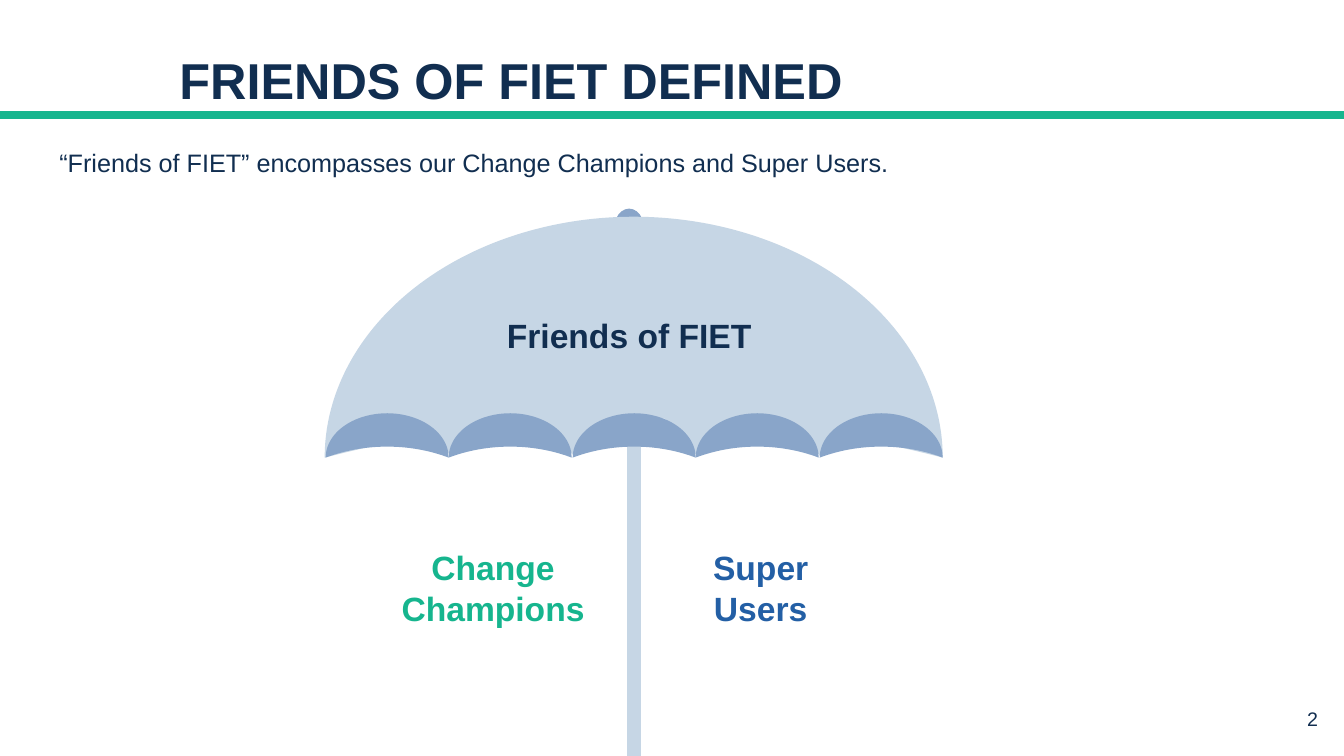
import pptx
import pptx.dml.color
import pptx.enum.shapes
import pptx.enum.text
import pptx.oxml.ns
import pptx.util
import lxml.etree

PX = 9144
SHAPE = pptx.enum.shapes.MSO_SHAPE
ALIGN = pptx.enum.text.PP_ALIGN
NAVY, GREEN, BLUE = "112E50", "16B58E", "235FA5"
PALE, STEEL = "C6D6E5", "89A5C9"


def color(value):
    return pptx.dml.color.RGBColor.from_string(value)


def emu(*lengths):
    return [pptx.util.Emu(length * PX) for length in lengths]


def write(frame, text, size=18, tint=NAVY, bold=False, align=ALIGN.LEFT, spacing=None):
    frame.word_wrap = True
    for index, line in enumerate(text.split("\n")):
        paragraph = frame.add_paragraph() if index else frame.paragraphs[0]
        paragraph.alignment = align
        paragraph.line_spacing = spacing
        run = paragraph.add_run()
        run.text = line
        run.font.name = "Arial"
        run.font.size = pptx.util.Pt(size)
        run.font.bold = bold
        run.font.color.rgb = color(tint)


def add_label(slide, box, text, **style):
    label = slide.shapes.add_textbox(*emu(*box))
    write(label.text_frame, text, **style)


def add_title(slide, box, text):
    title = slide.shapes.title
    title.left, title.top, title.width, title.height = emu(*box)
    title.text_frame.vertical_anchor = pptx.enum.text.MSO_ANCHOR.BOTTOM
    title.text_frame.auto_size = pptx.enum.text.MSO_AUTO_SIZE.NONE
    write(title.text_frame, text, size=36, bold=True, spacing=0.9)


def add_part(shapes, kind, box, tint, rotation=0, curve=None):
    part = shapes.add_shape(kind, *emu(*box))
    part.shadow.inherit = False
    part.rotation = rotation
    part.fill.solid()
    part.fill.fore_color.rgb = color(tint)
    part.line.fill.background()
    if curve is not None:
        part.adjustments[0] = curve


def add_rule(shapes, ends, tint, weight):
    rule = shapes.add_connector(pptx.enum.shapes.MSO_CONNECTOR.STRAIGHT, *emu(*ends))
    rule.line.color.rgb = color(tint)
    rule.line.width = pptx.util.Pt(weight)
    properties = rule._element.find(pptx.oxml.ns.qn("p:spPr"))
    lxml.etree.SubElement(properties, pptx.oxml.ns.qn("a:effectLst"))


def add_umbrella(slide):
    umbrella = slide.shapes.add_group_shape().shapes
    add_part(umbrella, SHAPE.OVAL, (609, 207, 30, 40), STEEL)
    add_rule(umbrella, (629, 390, 629, 750), PALE, 10)
    for rib in range(4):
        add_part(umbrella, SHAPE.ISOSCELES_TRIANGLE,
                 (399 + rib * 122, 396, 96, 56), PALE, rotation=180)
    add_part(umbrella, SHAPE.MOON, (509, 28, 239, 613), PALE, rotation=90, curve=0.837)
    for scallop in range(5):
        add_part(umbrella, SHAPE.MOON, (362 + scallop * 245 // 2, 371, 44, 122),
                 STEEL, rotation=90, curve=0.752)


def main():
    deck = pptx.Presentation()
    deck.slide_width, deck.slide_height = emu(1333, 750)
    slide = deck.slides.add_slide(deck.slide_layouts.get_by_name("Title Only"))

    add_label(slide, (1253, 696, 64, 39), "2", size=14, align=ALIGN.RIGHT)
    add_rule(slide.shapes, (0, 114, 1333, 114), GREEN, 6)
    add_title(slide, (168, 39, 995, 76), "FRIENDS OF FIET DEFINED")
    add_label(slide, (49, 141, 1101, 40),
              "“Friends of FIET” encompasses our Change Champions and Super Users.")
    add_umbrella(slide)
    for box, text, tint in (
        ((473, 308, 302, 50), "Friends of FIET", NAVY),
        ((338, 538, 302, 91), "Change Champions", GREEN),
        ((641, 538, 227, 91), "Super\nUsers", BLUE),
    ):
        add_label(slide, box, text, size=24, tint=tint, bold=True, align=ALIGN.CENTER)
    deck.save("out.pptx")


if __name__ == "__main__":
    main()
